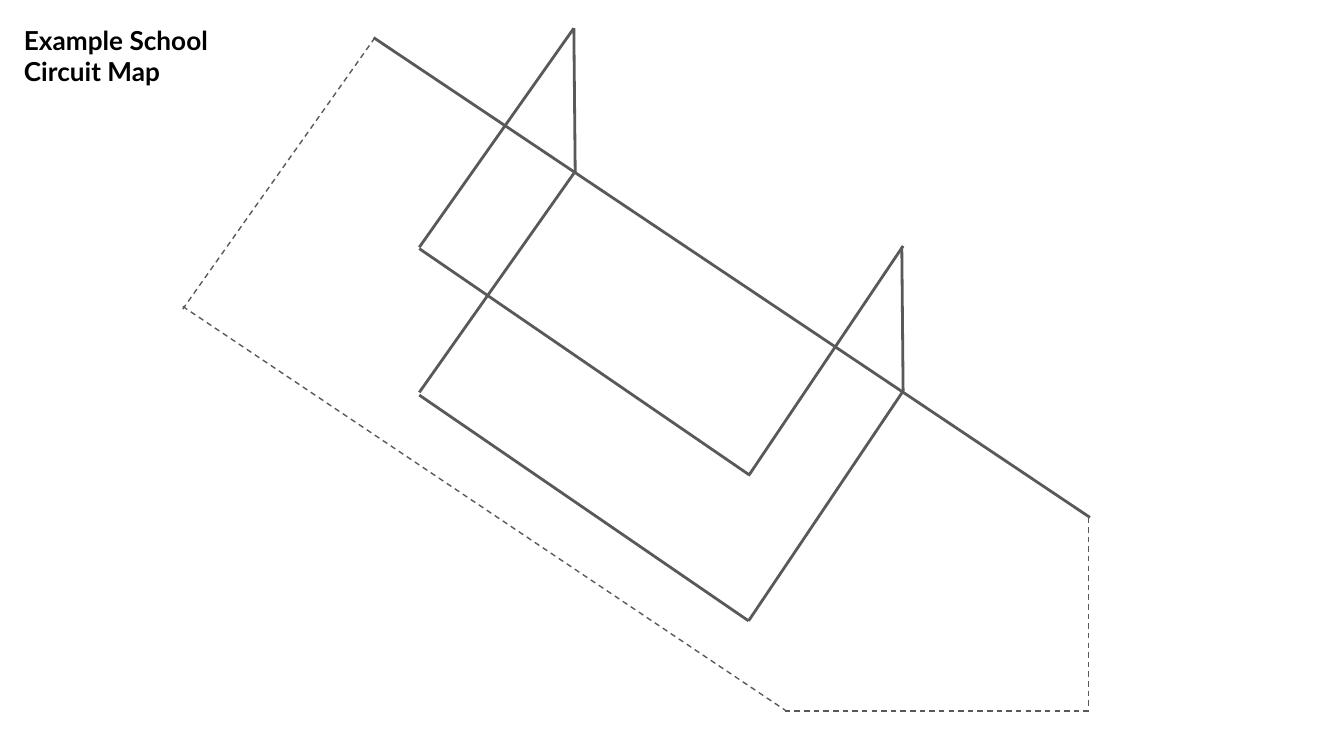
from dataclasses import dataclass

from lxml.etree import SubElement
from pptx import Presentation
from pptx.dml.color import RGBColor
from pptx.enum.dml import MSO_LINE
from pptx.enum.shapes import MSO_CONNECTOR
from pptx.oxml.ns import qn
from pptx.util import Inches, Pt


@dataclass(frozen=True)
class Theme:
    font: str = "Lato"
    title_size: float = 14
    title_color: str = "000000"
    line_color: str = "595959"
    wall_width: float = 1.5
    boundary_width: float = 0.75


class MapPage:
    def __init__(self, page, theme):
        self.page = page
        self.theme = theme

    def line(self, start, end, width):
        connector = self.page.shapes.add_connector(
            MSO_CONNECTOR.STRAIGHT, *(Inches(value) for value in (*start, *end))
        )
        connector.line.color.rgb = RGBColor.from_string(self.theme.line_color)
        connector.line.width = Pt(width)
        SubElement(connector._element.spPr, qn("a:effectLst"))
        return connector

    def wall(self, start, end):
        self.line(start, end, self.theme.wall_width)

    def boundary(self, start, end):
        connector = self.line(start, end, self.theme.boundary_width)
        connector.line.dash_style = MSO_LINE.DASH

    def title(self, text, left, top, width, height):
        box = self.page.shapes.add_textbox(
            Inches(left), Inches(top), Inches(width), Inches(height)
        )
        frame = box.text_frame
        frame.word_wrap = True
        frame.margin_left = frame.margin_right = Inches(0.1)
        frame.margin_top = frame.margin_bottom = Inches(0.1)
        paragraph = frame.paragraphs[0]
        paragraph.text = text
        paragraph.font.name = self.theme.font
        paragraph.font.size = Pt(self.theme.title_size)
        paragraph.font.bold = True
        paragraph.font.color.rgb = RGBColor.from_string(self.theme.title_color)


def main():
    # Widescreen page, 16:9
    deck = Presentation()
    deck.slide_width = Inches(10)
    deck.slide_height = deck.slide_width * 9 // 16
    page = deck.slides.add_slide(deck.slide_layouts[6])
    circuit = MapPage(page, Theme())

    # Long wall
    circuit.wall((2.78, 0.28), (8.11, 3.85))

    # Lower and upper outlines: left side, front and right side of each
    left, front, right = 4.27, 3.12, 6.72
    corner = 5.57
    for side_tops, front_tops, right_tops in (
        ((1.29, 2.92), (2.94, 4.62), (4.62, 2.91)),
        ((0.21, 1.84), (1.85, 3.53), (3.54, 1.83)),
    ):
        circuit.wall((left, side_tops[0]), (front, side_tops[1]))
        circuit.wall((front, front_tops[0]), (corner, front_tops[1]))
        circuit.wall((corner, right_tops[0]), (right, right_tops[1]))

    # Uprights joining the two outlines
    circuit.wall((4.27, 0.21), (4.28, 1.29))
    circuit.wall((6.71, 1.84), (6.72, 2.91))

    # Dashed boundary of the grounds
    circuit.boundary((2.79, 0.28), (1.36, 2.3))
    circuit.boundary((1.36, 2.28), (5.85, 5.29))
    circuit.boundary((5.84, 5.29), (8.11, 5.29))
    circuit.boundary((8.1, 3.85), (8.1, 5.3))

    # Title
    circuit.title("Example School Circuit Map", 0.08, 0.08, 2.12, 1.2)

    deck.save("out.pptx")


if __name__ == "__main__":
    main()
